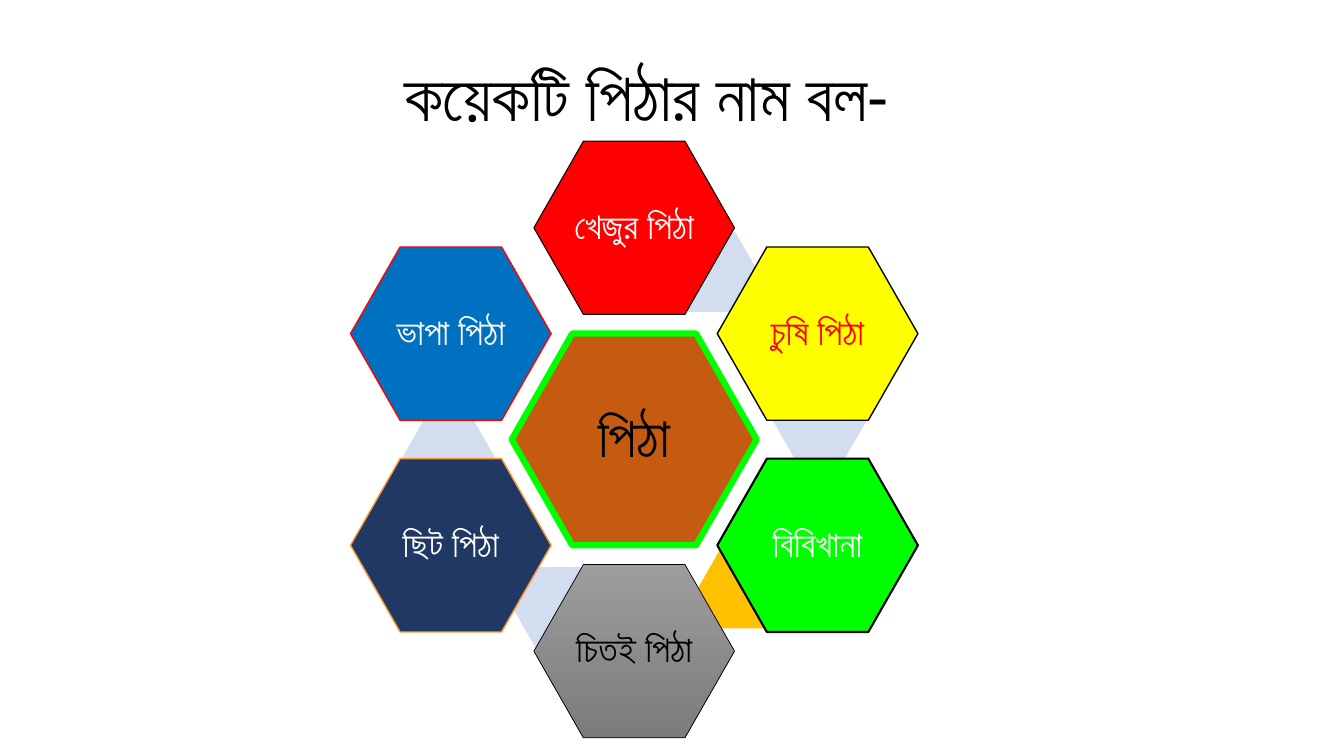
"""Build a slide that names six kinds of pitha around a central hexagon."""
import math
from pptx import Presentation
from pptx import util as u
from pptx.dml.color import RGBColor
from pptx.enum import shapes, text

TITLE = "কয়েকটি পিঠার নাম বল-"
CORE = ("পিঠা", "rust", "black", "lime", 4.5)
PETALS = [
    ("খেজুর পিঠা", "red", "white", "black", 0.75),
    ("চুষি পিঠা", "yellow", "red", "black", 1),
    ("বিবিখানা", "lime", "white", "black", 1.5),
    ("চিতই পিঠা", "grey", "black", "black", 0.5),
    ("ছিট পিঠা", "navy", "white", "orange", 1),
    ("ভাপা পিঠা", "blue", "white", "red", 1),
]
LINKS = [
    (7.06, 2.7, "pale"),
    (8.13, 4.18, "pale"),
    (7.38, 5.84, "gold"),
    (5.54, 6.02, "pale"),
    (4.45, 4.54, "pale"),
]
THEME = {
    "font": "Calibri", "title": 48, "core": 40, "petal": 26,
    "black": "000000", "white": "FFFFFF", "red": "FF0000", "lime": "00FF00",
    "yellow": "FFFF00", "rust": "C55A11", "navy": "203864", "blue": "0070C0",
    "orange": "FF9933", "gold": "FFC000", "pale": "D2DEEF",
    "grey": ("9D9D9D", "7C7C7C"),
}
MID = (6.29, 4.36)
RADIUS = 2.1
SIZES = {"core": (2.43, 2.1), "petal": (1.99, 1.72), "link": (0.92, 0.79)}


def assign(target, values):
    """Set each named attribute on the target."""
    for name, value in values.items():
        setattr(target, name, value)


def color(name):
    """Return the theme colour of this name."""
    return RGBColor.from_string(THEME[name])


def write(frame, words, size, ink, spacing):
    """Fill a text frame with one centred line."""
    frame.text = words
    line = frame.paragraphs[0]
    assign(line, {"alignment": text.PP_ALIGN.CENTER, "line_spacing": spacing})
    font = line.runs[0].font
    assign(font, {"name": THEME["font"], "size": u.Pt(THEME[size])})
    font.color.rgb = color(ink)


def paint(fill, name):
    """Apply a solid or a downward gradient fill."""
    if isinstance(THEME[name], tuple):
        fill.gradient()
        fill.gradient_angle = 270
        for stop, tone in zip(fill.gradient_stops, THEME[name]):
            stop.color.rgb = RGBColor.from_string(tone)
    else:
        fill.solid()
        fill.fore_color.rgb = color(name)


def hexagon(slide, x, y, kind, fill):
    """Add a hexagon centred on a point."""
    wide, high = SIZES[kind]
    box = [u.Inches(v) for v in (x - wide / 2, y - high / 2, wide, high)]
    shape = slide.shapes.add_shape(shapes.MSO_SHAPE.HEXAGON, *box)
    shape.adjustments[0] = 0.286
    shape.shadow.inherit = False
    paint(shape.fill, fill)
    shape.line.fill.background()
    return shape


def label(slide, x, y, kind, item):
    """Add an outlined hexagon with its name."""
    words, fill, ink, edge, weight = item
    shape = hexagon(slide, x, y, kind, fill)
    shape.line.color.rgb = color(edge)
    shape.line.width = u.Pt(weight)
    frame = shape.text_frame
    pad = u.Inches(0.04)
    assign(frame, {"word_wrap": False, "vertical_anchor": text.MSO_ANCHOR.MIDDLE,
                   "margin_left": pad, "margin_right": pad,
                   "margin_top": pad, "margin_bottom": pad})
    write(frame, words, kind, ink, 0.9)


def main():
    """Lay out the title, the core and the ring."""
    deck = Presentation()
    assign(deck, {"slide_width": u.Inches(13.33), "slide_height": u.Inches(7.5)})
    slide = deck.slides.add_slide(deck.slide_layouts[5])
    title = slide.shapes.title
    assign(title, {"left": u.Inches(1.64), "top": u.Inches(0.49),
                   "width": u.Inches(9.54), "height": u.Inches(0.91)})
    assign(title.text_frame, {"word_wrap": True,
                              "vertical_anchor": text.MSO_ANCHOR.TOP,
                              "auto_size": text.MSO_AUTO_SIZE.SHAPE_TO_FIT_TEXT})
    write(title.text_frame, TITLE, "title", "black", 1.0)
    label(slide, *MID, "core", CORE)
    for i, item in enumerate(PETALS):
        if i < len(LINKS):
            x, y, fill = LINKS[i]
            hexagon(slide, x, y, "link", fill)
        turn = math.radians(60 * i)
        x = MID[0] + RADIUS * math.sin(turn)
        y = MID[1] - RADIUS * math.cos(turn)
        label(slide, x, y, "petal", item)
    deck.save("out.pptx")


if __name__ == "__main__":
    main()
